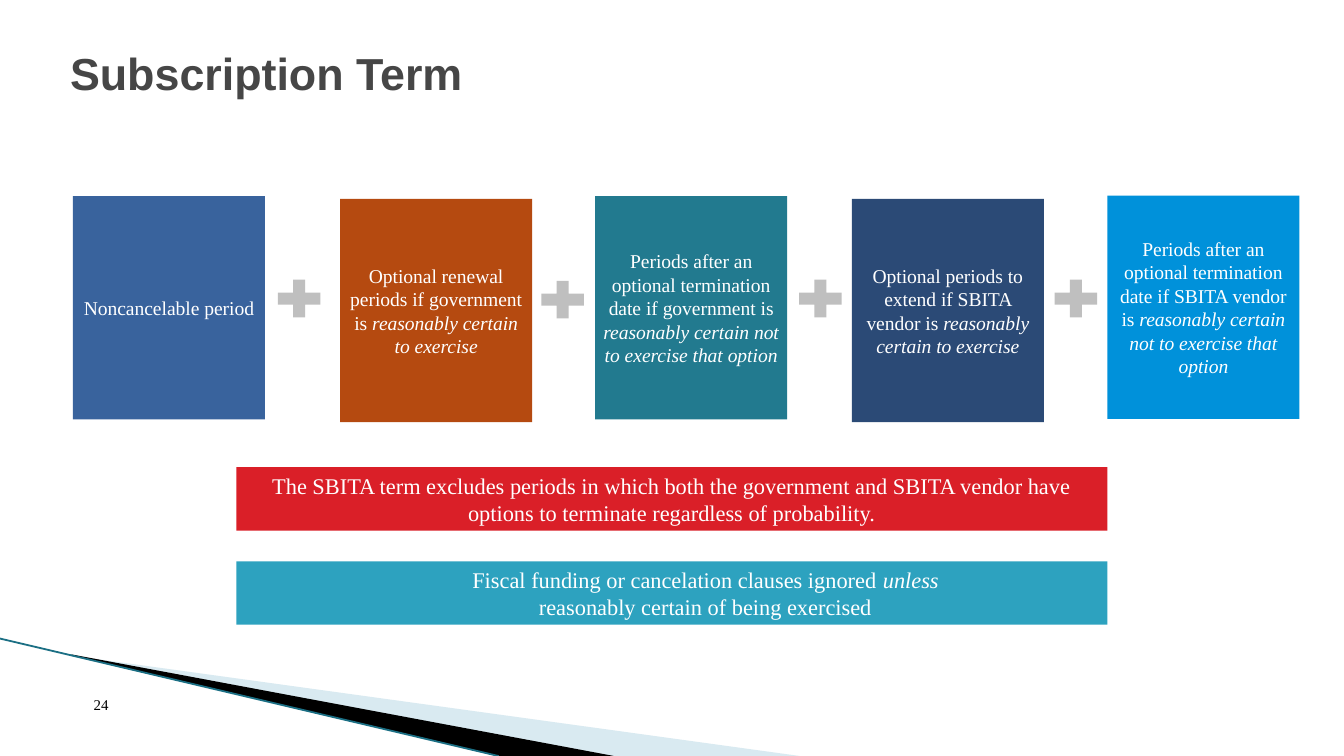
from pptx import Presentation
from pptx.dml.color import RGBColor
from pptx.enum.shapes import MSO_CONNECTOR, MSO_SHAPE
from pptx.enum.text import MSO_ANCHOR, PP_ALIGN
from pptx.oxml.ns import qn
from pptx.util import Cm, Pt
from lxml import etree

RECTANGLE = MSO_SHAPE.RECTANGLE
PLUS = MSO_SHAPE.MATH_PLUS
STRAIGHT = MSO_CONNECTOR.STRAIGHT
MIDDLE = MSO_ANCHOR.MIDDLE
CENTER = PP_ALIGN.CENTER
SERIF = "Times New Roman"


def paint(shape, color):
    shape.shadow.inherit = False
    shape.fill.solid()
    shape.fill.fore_color.rgb = RGBColor.from_string(color)
    shape.line.fill.background()


def add_panel(left, top, width, height, color, size, lines, indent=0):
    panel = page.shapes.add_shape(RECTANGLE, Cm(left), Cm(top), Cm(width), Cm(height))
    paint(panel, color)
    frame = panel.text_frame
    frame.word_wrap = True
    frame.vertical_anchor = MIDDLE
    frame.margin_left = frame.margin_right = Cm(0.08)
    frame.margin_top = frame.margin_bottom = Cm(0.08)
    for index, (plain, italic) in enumerate(lines):
        para = frame.add_paragraph() if index else frame.paragraphs[0]
        para.alignment = CENTER
        if indent:
            para.level = 1
            para._p.get_or_add_pPr().set("marL", str(Cm(indent)))
        para.font.name = SERIF
        para.font.size = Pt(size)
        para.font.color.rgb = RGBColor.from_string("FFFFFF")
        para.add_run().text = plain
        if italic:
            span = para.add_run()
            span.text = italic
            span.font.italic = True


deck = Presentation()
deck.slide_width = Cm(25.4)
deck.slide_height = Cm(14.29)
page = deck.slides.add_slide(deck.slide_layouts[5])

wedges = [
    ("A0CBDC", [(1.4, 12.4), (15.11, 14.29), (11.58, 14.29)]),
    ("000000", [(1.35, 12.37), (11.6, 14.29), (9.45, 14.29), (1.37, 12.4)]),
]
for color, points in wedges:
    corners = [(Cm(x), Cm(y)) for x, y in points]
    builder = page.shapes.build_freeform(*corners[0])
    builder.add_line_segments(corners[1:], close=True)
    wedge = builder.convert_to_shape()
    paint(wedge, color)
    if color == "A0CBDC":
        fill_color = wedge.fill._xPr.find(qn("a:solidFill"))[0]
        etree.SubElement(fill_color, qn("a:alpha")).set("val", "40000")

edge = page.shapes.add_connector(STRAIGHT, Cm(0), Cm(12.07), Cm(9.42), Cm(14.29))
edge.line.color.rgb = RGBColor.from_string("1B6F84")
edge.line.width = Pt(0.95)
etree.SubElement(edge._element.spPr, qn("a:effectLst"))

title = page.shapes.title
title.left, title.top, title.width, title.height = Cm(1.07), Cm(0.61), Cm(22.78), Cm(1.65)
title.text_frame.text = "Subscription Term"
title.text_frame.vertical_anchor = MIDDLE
para = title.text_frame.paragraphs[0]
para.alignment = PP_ALIGN.LEFT
para.line_spacing = 0.9
para.font.name = "Arial"
para.font.size = Pt(24)
para.font.bold = True
para.font.color.rgb = RGBColor.from_string("464646")

periods = [
    (1.38, 3.71, "39639D", "Noncancelable period", ""),
    (6.43, 3.76, "B54A10", "Optional renewal periods if government is ",
     "reasonably certain to exercise"),
    (11.25, 3.71, "227A8F", "Periods after an optional termination date if government is ",
     "reasonably certain not to exercise that option"),
    (16.1, 3.76, "2B4A76", "Optional periods to extend if SBITA vendor is ",
     "reasonably certain to exercise"),
    (20.93, 3.7, "0091DA", "Periods after an optional termination date if SBITA vendor is ",
     "reasonably certain not to exercise that option"),
]
for left, top, color, plain, italic in periods:
    add_panel(left, top, 3.63, 4.22, color, 10.5, [(plain, italic)])

for left, top in [(5.11, 5.16), (10.09, 5.18), (14.96, 5.16), (19.79, 5.16)]:
    plus = page.shapes.add_shape(PLUS, Cm(left), Cm(top), Cm(1.09), Cm(0.97))
    paint(plus, "BFBFBF")

add_panel(4.47, 8.83, 16.46, 1.2, "DA1F28", 12, [
    ("The SBITA term excludes periods in which both the government and SBITA vendor have "
     "options to terminate regardless of probability.", ""),
])
add_panel(4.47, 10.61, 16.46, 1.2, "2DA2BF", 12, [
    ("Fiscal funding or cancelation clauses ignored ", "unless"),
    ("reasonably certain of being exercised", ""),
], indent=1.27)

number = page.shapes.add_textbox(Cm(1.52), Cm(13.03), Cm(0.84), Cm(0.76))
number.text_frame.word_wrap = True
number.text_frame.text = "24"
para = number.text_frame.paragraphs[0]
para.font.name = SERIF
para.font.size = Pt(8)
para.font.color.rgb = RGBColor.from_string("000000")

deck.save("out.pptx")
